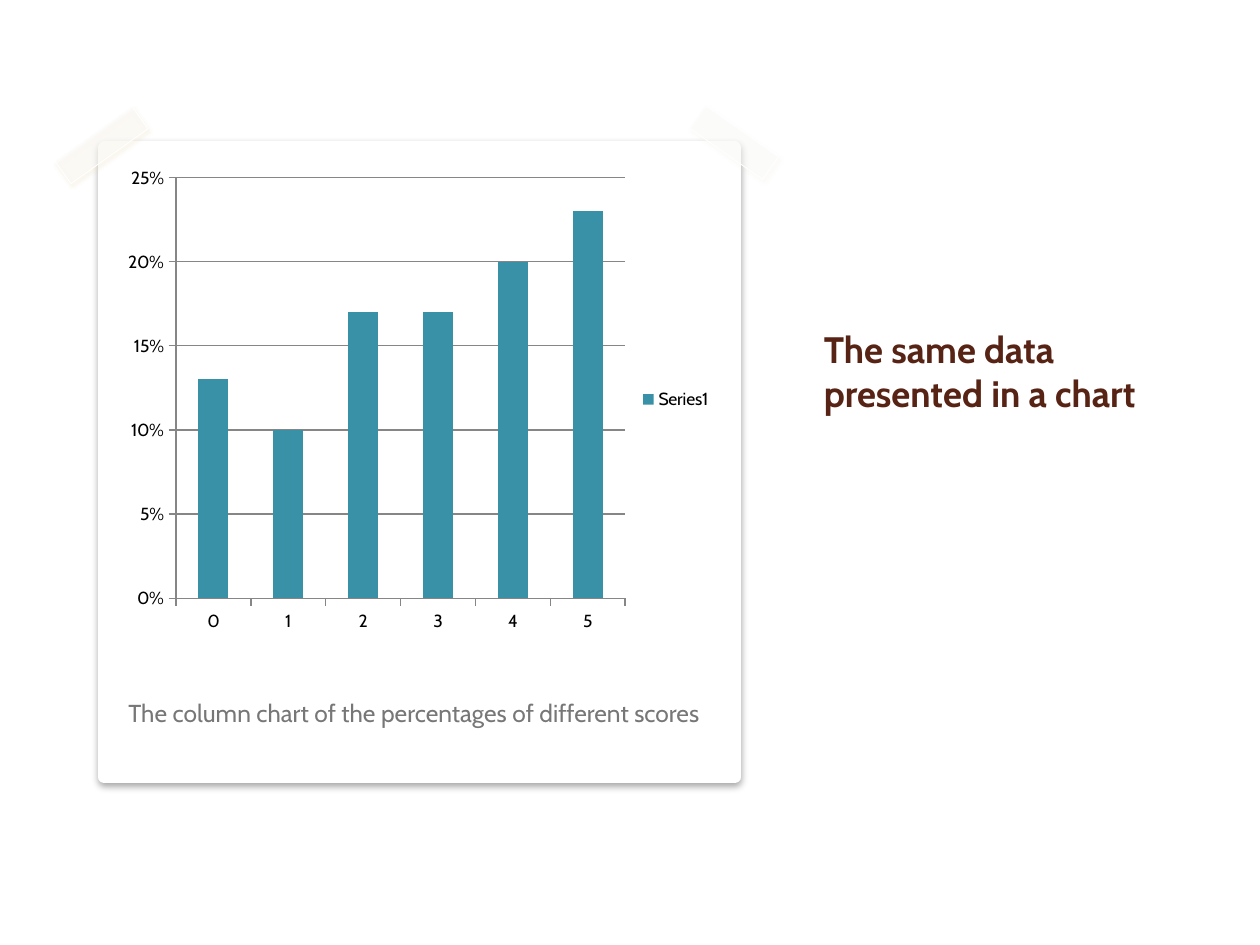
import pptx
import pptx.chart.data
import pptx.dml.color
import pptx.enum.chart
import pptx.enum.shapes
import pptx.enum.text
import pptx.oxml
import pptx.oxml.ns
import pptx.util

Inches = pptx.util.Inches
Pt = pptx.util.Pt
SHAPES = pptx.enum.shapes.MSO_SHAPE
ANCHORS = pptx.enum.text.MSO_ANCHOR
CHARTS = pptx.enum.chart
FONT = "Cabin"
SCORES = {"0": 0.13, "1": 0.10, "2": 0.17, "3": 0.17, "4": 0.20, "5": 0.23}


def color(value):
    """Turn a hex string into a color."""
    return pptx.dml.color.RGBColor.from_string(value)


def apply_format(target, values):
    """Set each named attribute of the target."""
    for name, value in values.items():
        setattr(target, name, value)


def style_font(font, size, shade, bold=False):
    """Give a font its face, size, weight and color."""
    apply_format(font, {"name": FONT, "size": Pt(size), "bold": bold})
    font.color.rgb = color(shade)


def add_panel(page, box, kind, fill, line_width, shadow, opacity=100, rotation=0):
    """Draw a white-edged shape with a soft outer shadow."""
    panel = page.shapes.add_shape(kind, *map(Inches, box))
    panel.rotation = rotation
    panel.fill.solid()
    panel.fill.fore_color.rgb = color(fill)
    panel.line.color.rgb = color("FFFFFF")
    panel.line.width = Pt(line_width)
    panel.shadow.inherit = False
    namespace = pptx.oxml.ns.nsdecls("a")
    if opacity < 100:
        tint = panel.element.spPr.find(pptx.oxml.ns.qn("a:solidFill"))[0]
        tint.append(pptx.oxml.parse_xml(f'<a:alpha {namespace} val="{opacity * 1000}"/>'))
    shade, strength, blur, distance, angle = shadow
    effects = panel.element.spPr.find(pptx.oxml.ns.qn("a:effectLst"))
    effects.append(pptx.oxml.parse_xml(
        f'<a:outerShdw {namespace} blurRad="{Pt(blur)}" dist="{Pt(distance)}" '
        f'dir="{angle * 60000}" algn="tl" rotWithShape="0"><a:srgbClr val="{shade}">'
        f'<a:alpha val="{strength * 1000}"/></a:srgbClr></a:outerShdw>'))


def add_text(page, box, text, anchor, size, shade, bold=False, spacing=None):
    """Write one wrapped paragraph in a box."""
    frame = page.shapes.add_textbox(*map(Inches, box)).text_frame
    apply_format(frame, {"word_wrap": True, "vertical_anchor": anchor})
    para = frame.paragraphs[0]
    para.line_spacing = spacing
    span = para.add_run()
    span.text = text
    style_font(span.font, size, shade, bold)


def add_score_chart(page, box):
    """Draw the column chart of score percentages."""
    data = pptx.chart.data.CategoryChartData(number_format="0%")
    data.categories = SCORES.keys()
    data.add_series("Series1", SCORES.values())
    chart = page.shapes.add_chart(
        CHARTS.XL_CHART_TYPE.COLUMN_CLUSTERED, *map(Inches, box), data).chart
    apply_format(chart, {"has_title": False, "has_legend": True})
    style_font(chart.font, 10, "000000")
    apply_format(chart.legend, {
        "position": CHARTS.XL_LEGEND_POSITION.RIGHT, "include_in_layout": False})
    plot = chart.plots[0]
    apply_format(plot, {"gap_width": 150, "vary_by_categories": False})
    columns = plot.series[0].format.fill
    columns.solid()
    columns.fore_color.rgb = color("3891A7")
    apply_format(chart.value_axis, {
        "minimum_scale": 0, "maximum_scale": 0.25, "major_unit": 0.05,
        "has_major_gridlines": True})
    apply_format(chart.value_axis.tick_labels, {
        "number_format": "0%", "number_format_is_linked": False})
    for axis in (chart.category_axis, chart.value_axis):
        axis.major_tick_mark = CHARTS.XL_TICK_MARK.OUTSIDE
        axis.format.line.color.rgb = color("868686")
    chart.value_axis.major_gridlines.format.line.color.rgb = color("868686")


def add_chart_card(page, box):
    """Build the taped card with its chart and caption."""
    left, top, width, height = box
    add_panel(page, box, SHAPES.RECTANGLE, "FFFFFF", 7, ("000000", 35, 4.4, 1.5, 90))
    tapes = (
        (-0.4, -0.13, 0.75, 324.5, ("EBDAB2", 40, 2, 2, 55)),
        (4.64, -0.15, 0.71, 35.1, ("E7DEC9", 20, 2, 2, 55)),
    )
    for across, down, length, rotation, shadow in tapes:
        add_panel(page, (left + across, top + down, length, 0.22),
                  SHAPES.FLOWCHART_PROCESS, "FBFBFB", 0.5, shadow, 45, rotation)
    inner_left, inner_width = left + 0.09, width - 0.17
    add_text(page, (inner_left, top + 4.08, inner_width, 0.83),
             "The column chart of the percentages of different scores",
             ANCHORS.MIDDLE, 14, "777777", spacing=Pt(16))
    add_score_chart(page, (inner_left, top + 0.08, inner_width, height - 1.16))


def main():
    """Build and save the slide."""
    deck = pptx.Presentation()
    apply_format(deck, {"slide_width": Inches(10), "slide_height": Inches(7.5)})
    page = deck.slides.add_slide(deck.slide_layouts[6])
    add_chart_card(page, (0.83, 1.17, 5, 5))
    add_text(page, (6.44, 1.17, 3, 2.17), "The same data presented in a chart",
             ANCHORS.BOTTOM, 21, "572314", bold=True)
    deck.save("out.pptx")


if __name__ == "__main__":
    main()
